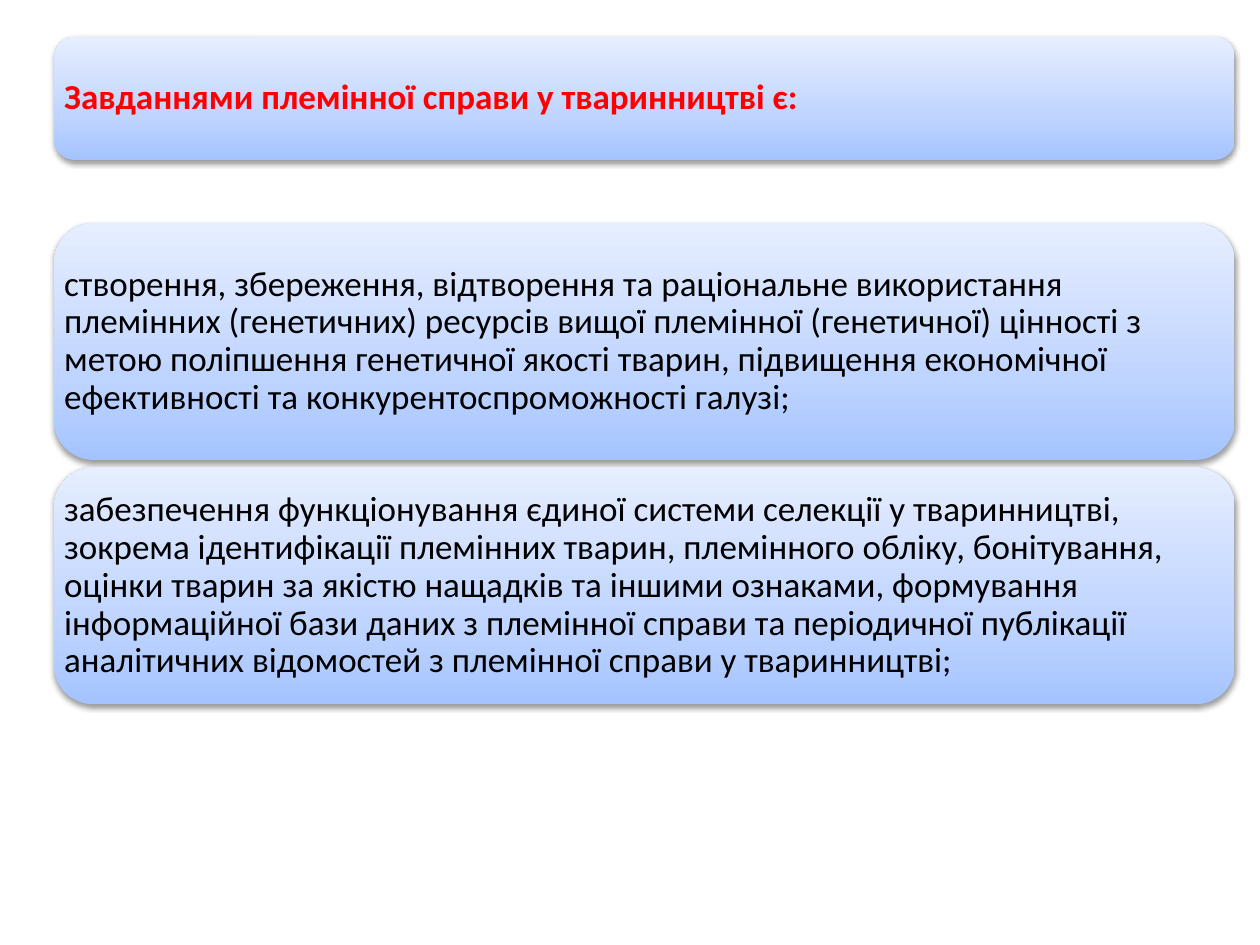
from lxml import etree
from pptx import Presentation
from pptx.dml.color import RGBColor
from pptx.enum.shapes import MSO_SHAPE as Shape
from pptx.enum.text import MSO_ANCHOR as Anchor, MSO_AUTO_SIZE as AutoSize, PP_ALIGN as Align
from pptx.oxml.ns import qn
from pptx.util import Inches, Pt

LEFT, WIDTH = 0.43, 9.37
TITLE_BOX = (LEFT, 0.29, WIDTH, 0.98)
TASK_TOP, TASK_HEIGHT, TASK_GAP = 1.77, 1.88, 0.06
GRADIENT = [(0, "A4C4FF"), (35, "BFD4FF"), (100, "E6EEFF")]

TITLE = "Завданнями племінної справи у тваринництві є:"
TASKS = [
    "створення, збереження, відтворення та раціональне використання племінних (генетичних) "
    "ресурсів вищої племінної (генетичної) цінності з метою поліпшення генетичної якості тварин, "
    "підвищення економічної ефективності та конкурентоспроможності галузі;",
    "забезпечення функціонування єдиної системи селекції у тваринництві, зокрема ідентифікації "
    "племінних тварин, племінного обліку, бонітування, оцінки тварин за якістю нащадків та іншими "
    "ознаками, формування інформаційної бази даних з племінної справи та періодичної публікації "
    "аналітичних відомостей з племінної справи у тваринництві;",
]


def color(value):
    return RGBColor.from_string(value)


def set_all(target, values):
    for name, value in values.items():
        setattr(target, name, value)


def add_color(parent, value):
    return etree.SubElement(parent, qn("a:srgbClr"), val=value)


def add_panel(slide, box):
    """Rounded panel with a vertical gradient and a soft shadow below."""
    panel = slide.shapes.add_shape(Shape.ROUNDED_RECTANGLE, *map(Inches, box))
    panel.line.fill.background()
    panel.shadow.inherit = False
    panel.fill.gradient()
    panel.fill.gradient_angle = 90

    # Gradient stops
    properties = panel.element.spPr
    stops = properties.find(".//" + qn("a:gsLst"))
    for stop in list(stops):
        stops.remove(stop)
    for position, value in GRADIENT:
        stop = etree.SubElement(stops, qn("a:gs"), pos=str(position * 1000))
        add_color(stop, value)

    # Shadow
    shadow = etree.SubElement(
        properties.find(qn("a:effectLst")), qn("a:outerShdw"),
        blurRad=str(Pt(3.1)), dist=str(Pt(1.6)), dir="5400000", rotWithShape="0")
    etree.SubElement(add_color(shadow, "000000"), qn("a:alpha"), val="38000")


def write_text(shape, text, text_color, bold=False):
    frame = shape.text_frame
    frame.text = text
    margins = dict.fromkeys(
        ("margin_left", "margin_top", "margin_right", "margin_bottom"), Inches(0.08))
    set_all(frame, {"word_wrap": True, "auto_size": AutoSize.NONE,
                    "vertical_anchor": Anchor.MIDDLE, **margins})
    paragraph = frame.paragraphs[0]
    set_all(paragraph, {"alignment": Align.LEFT, "line_spacing": 0.9, "space_before": Pt(0)})
    font = paragraph.runs[0].font
    set_all(font, {"name": "Calibri", "size": Pt(20), "bold": bold})
    font.color.rgb = color(text_color)


def add_title(slide, box):
    add_panel(slide, box)
    title = slide.shapes.title
    set_all(title, dict(zip(("left", "top", "width", "height"), map(Inches, box))))
    write_text(title, TITLE, "FF0000", bold=True)
    # Bring the title in front of its panel
    slide.shapes.element.append(title.element)


def add_task(slide, box, text):
    add_panel(slide, box)
    write_text(slide.shapes.add_textbox(*map(Inches, box)), text, "000000")


def main():
    presentation = Presentation()
    set_all(presentation, {"slide_width": Inches(10), "slide_height": Inches(7.5)})
    slide = presentation.slides.add_slide(presentation.slide_layouts[5])

    add_title(slide, TITLE_BOX)
    for index, text in enumerate(TASKS):
        top = TASK_TOP + index * (TASK_HEIGHT + TASK_GAP)
        add_task(slide, (LEFT, top, WIDTH, TASK_HEIGHT), text)

    presentation.save("out.pptx")


if __name__ == "__main__":
    main()
